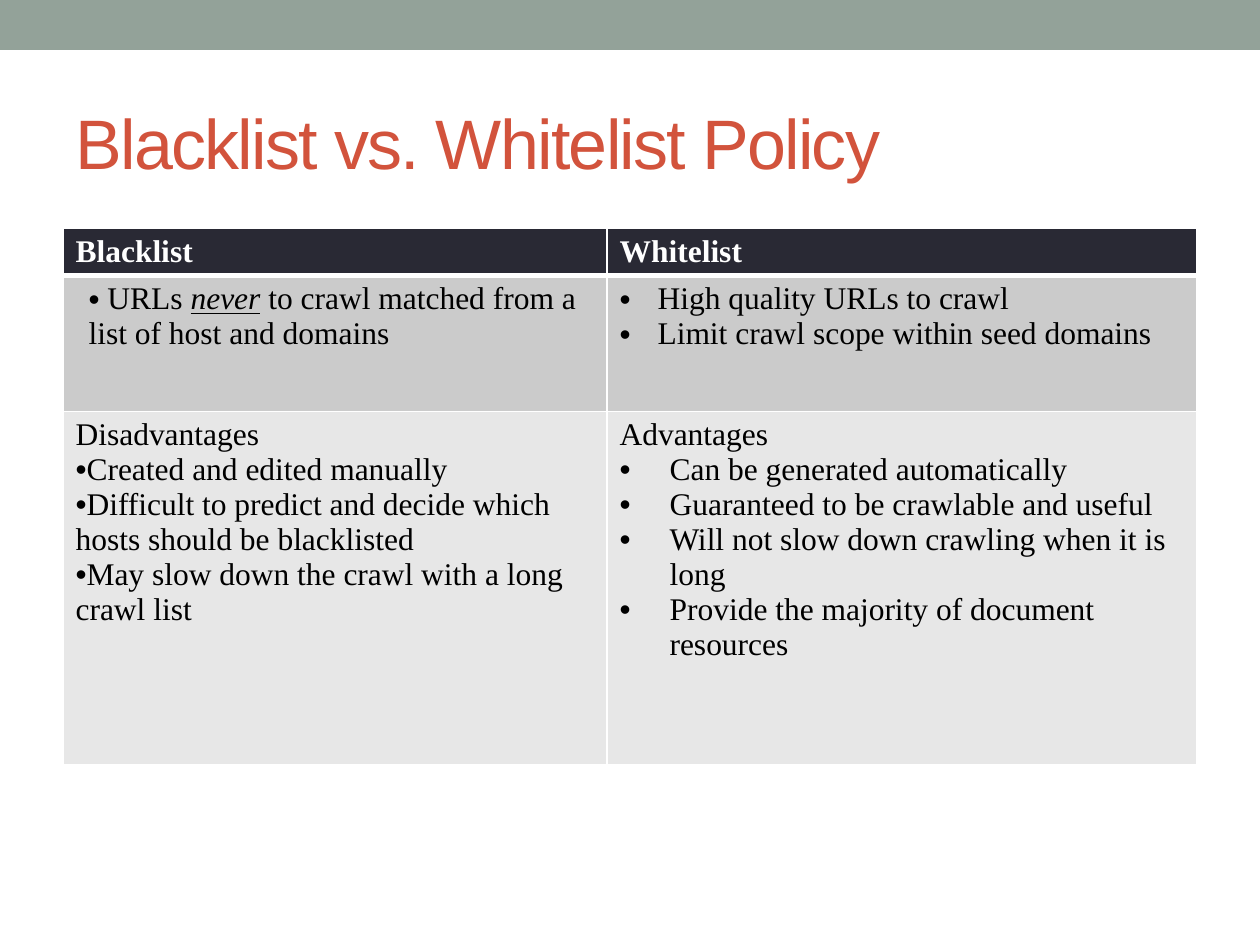
from lxml.etree import SubElement
from pptx import Presentation
from pptx.dml.color import RGBColor
from pptx.enum.shapes import MSO_SHAPE as Shape
from pptx.enum.text import MSO_ANCHOR as Anchor, PP_ALIGN as Align
from pptx.oxml.ns import qn
from pptx.util import Pt

EMU_PER_PX = 914400 / 126
SAGE = RGBColor(0x93, 0xA2, 0x99)
RUST = RGBColor(0xD2, 0x53, 0x3C)
NAVY = RGBColor(0x29, 0x29, 0x34)
GREY = RGBColor(0xCB, 0xCB, 0xCB)
PALE = RGBColor(0xE7, 0xE7, 0xE7)
WHITE = RGBColor(0xFF, 0xFF, 0xFF)
BLACK = RGBColor(0, 0, 0)


def px(*lengths):
    return [round(length * EMU_PER_PX) for length in lengths]


def write(para, text, size=18, font="Times New Roman", color=BLACK,
          bold=False, italic=False, underline=False):
    """Add a formatted span to the paragraph and return it."""
    span = para.add_run()
    span.text = text
    span.font.size = Pt(size)
    span.font.name = font
    span.font.color.rgb = color
    span.font.bold = bold
    span.font.italic = italic
    span.font.underline = underline
    return span


deck = Presentation()
deck.slide_width, deck.slide_height = px(1260, 945)
page = deck.slides.add_slide(deck.slide_layouts[5])

band = page.shapes.add_shape(Shape.RECTANGLE, *px(0, 0, 1260, 50))
band.shadow.inherit = False
band.fill.solid()
band.fill.fore_color.rgb = SAGE
band.line.fill.background()

title = page.shapes.title
title.left, title.top, title.width, title.height = px(63, 73, 1134, 136)
title.text_frame.vertical_anchor = Anchor.MIDDLE
title_para = title.text_frame.paragraphs[0]
title_para.alignment = Align.LEFT
title_span = write(title_para, "Blacklist vs. Whitelist Policy",
                   size=40, font="Arial", color=RUST)
title_span.font._element.set("spc", "-100")

# Each cell: bullet margin and hanging indent in px, level, heading, bullet items
cells = [
    [(0, 0, 0, "Blacklist", []),
     (0, 0, 0, "Whitelist", [])],
    [(13, 0, 0, "", [" URLs |never| to crawl matched from a list of host and domains"]),
     (38, -38, 0, "", ["High quality URLs to crawl",
                       "Limit crawl scope within seed domains"])],
    [(0, 0, 0, "Disadvantages",
      ["Created and edited manually",
       "Difficult to predict and decide which hosts should be blacklisted",
       "May slow down the crawl with a long crawl list"]),
     (50, -50, 1, "Advantages",
      ["Can be generated automatically",
       "Guaranteed to be crawlable and useful",
       "Will not slow down crawling when it is long",
       "Provide the majority of document resources"])],
]
row_fills = [NAVY, GREY, PALE]
row_heights = px(47, 136, 353)
column_widths = px(544, 590)

table = page.shapes.add_table(3, 2, *px(63, 228, 1134, 536)).table
for column, width in zip(table.columns, column_widths):
    column.width = width

for row_index, row_cells in enumerate(cells):
    table.rows[row_index].height = row_heights[row_index]
    is_header = row_index == 0
    top_width = 3 if row_index == 1 else 1
    bottom_width = 3 if is_header else 1

    for column_index, (margin, indent, level, heading, items) in enumerate(row_cells):
        cell = table.cell(row_index, column_index)
        cell_props = cell._tc.get_or_add_tcPr()
        for side, width in zip("LRTB", (1, 1, top_width, bottom_width)):
            edge = SubElement(cell_props, qn(f"a:ln{side}"), w=str(Pt(width)))
            edge_fill = SubElement(edge, qn("a:solidFill"))
            SubElement(edge_fill, qn("a:srgbClr"), val=str(WHITE))
        cell.fill.solid()
        cell.fill.fore_color.rgb = row_fills[row_index]

        frame = cell.text_frame
        para = frame.paragraphs[0]
        if heading:
            write(para, heading, bold=is_header, color=WHITE if is_header else BLACK)
        for item_index, item in enumerate(items):
            if heading or item_index:
                para = frame.add_paragraph()
            para.level = level
            para_props = para._p.get_or_add_pPr()
            para_props.set("marL", str(px(margin)[0]))
            para_props.set("indent", str(px(indent)[0]))
            SubElement(para_props, qn("a:buFont"), typeface="Arial")
            SubElement(para_props, qn("a:buChar"), char="•")
            for part_index, part in enumerate(item.split("|")):
                stressed = part_index == 1
                write(para, part, italic=stressed, underline=stressed)

deck.save("out.pptx")
